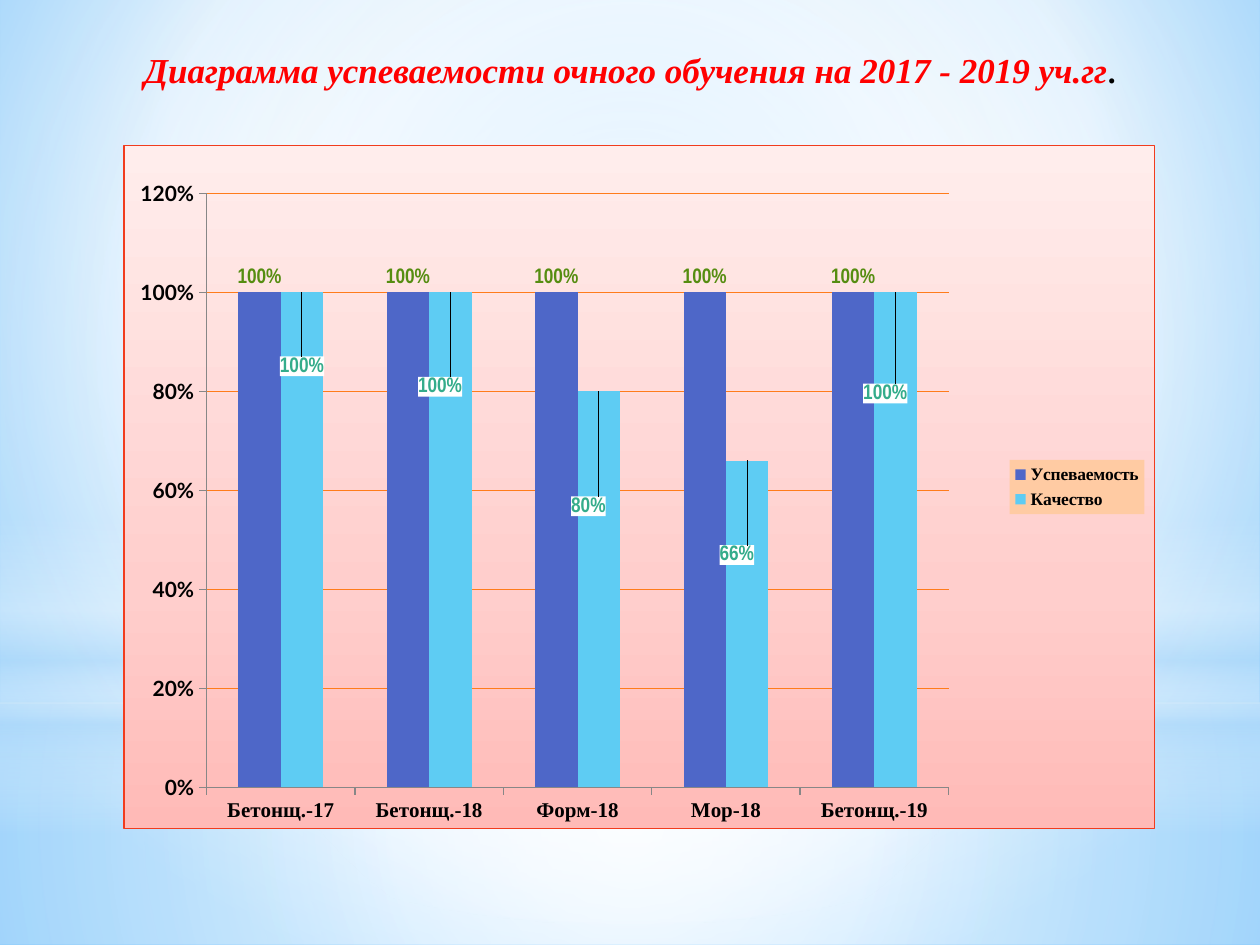
from lxml.etree import SubElement
from pptx import Presentation
from pptx.chart.data import CategoryChartData
from pptx.dml.color import RGBColor
from pptx.enum.chart import XL_CHART_TYPE, XL_LABEL_POSITION, XL_LEGEND_POSITION, XL_TICK_MARK
from pptx.enum.shapes import MSO_SHAPE
from pptx.enum.text import MSO_ANCHOR, PP_ALIGN
from pptx.oxml import parse_xml
from pptx.oxml.ns import nsdecls, qn
from pptx.util import Inches, Pt

SERIF = "Times New Roman"
GROUPS = ["Бетонщ.-17", "Бетонщ.-18", "Форм-18", "Мор-18", "Бетонщ.-19"]
SERIES = [
    ("Успеваемость", [1, 1, 1, 1, 1], "4E67C8", "568D11"),
    ("Качество", [1, 1, 0.8, 0.66, 1], "5ECCF3", "34AC8B"),
]
QUALITY_OFFSETS = [(0, 0.13), (-0.01, 0.16), (-0.01, 0.19), (-0.01, 0.16), (-0.01, 0.17)]
CENTER = (50, 50, 50, 50)


def color(value):
    """Turn a hex string into a colour."""
    return RGBColor.from_string(value)


def gradient(stops, angle=None, focus=None):
    """Make a gradient from (place, colour, opacity) stops, linear or circular."""
    fill = parse_xml(f'<a:gradFill {nsdecls("a")} rotWithShape="1"><a:gsLst/></a:gradFill>')
    for place, value, opacity in stops:
        stop = SubElement(fill[0], qn("a:gs"), pos=str(place * 1000))
        shade = SubElement(stop, qn("a:srgbClr"), val=value)
        if opacity < 100:
            SubElement(shade, qn("a:alpha"), val=str(opacity * 1000))
    if focus:
        circle = SubElement(fill, qn("a:path"), {"path": "circle"})
        sides = {side: str(part * 1000) for side, part in zip("ltrb", focus)}
        SubElement(circle, qn("a:fillToRect"), sides)
    else:
        SubElement(fill, qn("a:lin"), ang=str(angle * 60000), scaled="0")
    return fill


def swap_solid(parent, fill):
    """Put a gradient in the place of a solid fill."""
    solid = parent.find(qn("a:solidFill"))
    parent.replace(solid, fill)


def chart_fill(value, opacity=100):
    """Make the shape properties of a plainly filled chart part."""
    return parse_xml(
        f'<c:spPr {nsdecls("c", "a")}><a:solidFill><a:srgbClr val="{value}">'
        f'<a:alpha val="{opacity * 1000}"/></a:srgbClr></a:solidFill></c:spPr>')


def manual_layout(settings):
    """Make a chart layout from named settings."""
    layout = parse_xml(f'<c:layout {nsdecls("c")}><c:manualLayout/></c:layout>')
    for name, value in settings.items():
        SubElement(layout[0], qn(f"c:{name}"), val=str(value))
    return layout


def set_font(font, size, name, value="000000", bold=True):
    """Set the size, face, colour and weight of a font."""
    font.size, font.name, font.bold = Pt(size), name, bold
    font.color.rgb = color(value)


def draw_backdrop(slide):
    """Lay the soft sky gradients over the whole slide."""
    slide.background.fill.solid()
    backdrop = slide.background.fill._xPr
    swap_solid(backdrop, gradient(
        [(0, "9ED5FF", 100), (60, "FFFFFF", 100), (100, "5BB9FF", 100)], focus=(20, 10, 20, 60)))
    layers = [
        (MSO_SHAPE.RECTANGLE, 5.58, 1.92, gradient(
            [(0, "FFFFFF", 91), (37, "FFFFFF", 76), (100, "B4DCFA", 79)], focus=CENTER)),
        (MSO_SHAPE.RECTANGLE, 0, 5.58, gradient(
            [(0, "FFFFFF", 89), (48, "FFFFFF", 62), (100, "B4DCFA", 79)], focus=CENTER)),
        (MSO_SHAPE.RECTANGLE, 4.12, 2.5, gradient(
            [(0, "FFFFFF", 0), (29, "FFFFFF", 30), (45, "B4DCFA", 40), (55, "FFFFFF", 26),
             (65, "B4DCFA", 60), (100, "FFFFFF", 0)], angle=90)),
        (MSO_SHAPE.OVAL, 1.75, 5.58, gradient(
            [(0, "FFFFFF", 100), (56, "FFFFFF", 0)], focus=CENTER)),
    ]
    for kind, top, height, fill in layers:
        layer = slide.shapes.add_shape(kind, 0, Inches(top), Inches(10), Inches(height))
        layer.shadow.inherit = False
        layer.line.fill.background()
        layer.fill.solid()
        swap_solid(layer._element.spPr, fill)


def draw_title(slide, left, top, width, height):
    """Write the heading at the foot of its box."""
    box = slide.shapes.add_textbox(left, top, width, height)
    frame = box.text_frame
    frame.word_wrap = True
    frame.vertical_anchor = MSO_ANCHOR.BOTTOM
    para = frame.paragraphs[0]
    para.alignment = PP_ALIGN.CENTER
    for words, size, value, italic in [
        ("Диаграмма успеваемости очного обучения на 2017 - 2019 уч.гг", 20, "FF0000", True),
        (".", 18, "000000", False),
    ]:
        span = para.add_run()
        span.text = words
        set_font(span.font, size, SERIF, value)
        span.font.italic = italic


def style_axes(chart):
    """Style both axes and the gridlines."""
    for axis, face in [(chart.category_axis, SERIF), (chart.value_axis, "Lato")]:
        set_font(axis.tick_labels.font, 12, face)
        axis.major_tick_mark = XL_TICK_MARK.OUTSIDE
        axis.format.line.color.rgb = color("878787")
        axis.format.line.width = Pt(0.75)
    values = chart.value_axis
    values.minimum_scale, values.maximum_scale, values.major_unit = 0, 1.2, 0.2
    values.tick_labels.number_format = "0%"
    values.tick_labels.number_format_is_linked = False
    values.major_gridlines.format.line.color.rgb = color("FF7C1B")
    values.major_gridlines.format.line.width = Pt(0.75)


def style_series(series, fill, label_color):
    """Colour a series and set its value labels."""
    series.format.fill.solid()
    series.format.fill.fore_color.rgb = color(fill)
    labels = series.data_labels
    labels.show_value = True
    labels.number_format, labels.number_format_is_linked = "0%", False
    labels.position = XL_LABEL_POSITION.OUTSIDE_END
    set_font(labels.font, 12, "Arial Narrow", label_color)


def move_labels(series, label_color):
    """Pull each label down into its column, on a pale ground."""
    for index, (right, down) in enumerate(QUALITY_OFFSETS):
        label = series.points[index].data_label
        set_font(label.font, 12, "Arial Narrow", label_color)
        label.position = XL_LABEL_POSITION.OUTSIDE_END
        element = series.data_labels._element.findall(qn("c:dLbl"))[index]
        element.find(qn("c:idx")).addnext(manual_layout({"x": right, "y": down}))
        old = element.find(qn("c:spPr"))
        if old is not None:
            element.remove(old)
        element.find(qn("c:txPr")).addprevious(chart_fill("FFFFFF", 80))


def draw_chart(slide, left, top, width, height):
    """Chart attainment and quality for each group."""
    data = CategoryChartData(number_format="0%")
    data.categories = GROUPS
    for name, values, _, _ in SERIES:
        data.add_series(name, values)
    chart = slide.shapes.add_chart(
        XL_CHART_TYPE.COLUMN_CLUSTERED, left, top, width, height, data).chart
    chart.has_title = False
    set_font(chart.font, 10, "Lato", bold=False)
    style_axes(chart)
    plot = chart.plots[0]
    plot.gap_width, plot.overlap, plot.vary_by_categories = 150, 0, False
    for series, (_, _, fill, label_color) in zip(plot.series, SERIES):
        style_series(series, fill, label_color)
    move_labels(plot.series[1], SERIES[1][3])

    chart.has_legend = True
    chart.legend.position = XL_LEGEND_POSITION.RIGHT
    chart.legend.include_in_layout = False
    set_font(chart.legend.font, 10, SERIF)
    chart.legend._element.find(qn("c:txPr")).addprevious(chart_fill("FFCBA3"))

    area = chart._chartSpace.chart.plotArea
    old = area.find(qn("c:layout"))
    if old is not None:
        area.remove(old)
    area.insert(0, manual_layout({
        "layoutTarget": "inner", "xMode": "edge", "yMode": "edge",
        "x": 0.08, "y": 0.07, "w": 0.72, "h": 0.87}))
    ground = chart_fill("FFFFFF")
    swap_solid(ground, gradient(
        [(0, "FFBAB7", 100), (35, "FFCECC", 100), (100, "FFEDEC", 100)], angle=270))
    border = SubElement(ground, qn("a:ln"), w=str(Pt(0.75)))
    SubElement(SubElement(border, qn("a:solidFill")), qn("a:srgbClr"), val="F13C1E")
    chart._chartSpace.chart.addnext(ground)


def main():
    """Build the deck and save it."""
    deck = Presentation()
    deck.slide_width, deck.slide_height = Inches(10), Inches(7.5)
    slide = deck.slides.add_slide(deck.slide_layouts[6])
    draw_backdrop(slide)
    draw_title(slide, 0, 0, Inches(10), Inches(0.77))
    draw_chart(slide, Inches(0.98), Inches(1.15), Inches(8.19), Inches(5.43))
    deck.save("out.pptx")


if __name__ == "__main__":
    main()
